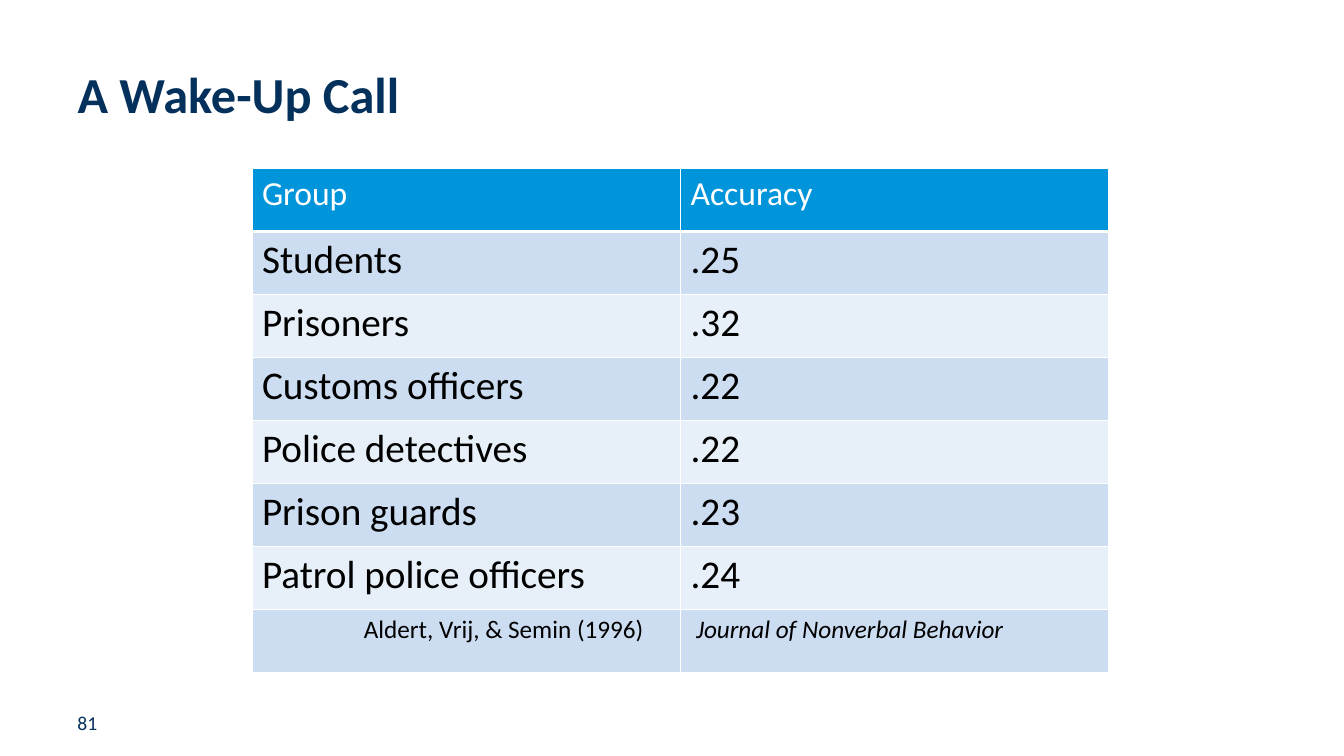
from lxml import etree
from pptx import Presentation
from pptx.dml.color import RGBColor
from pptx.enum.text import MSO_ANCHOR, PP_ALIGN
from pptx.oxml.ns import qn
from pptx.util import Cm, Pt

LEFT = PP_ALIGN.LEFT
TOP = MSO_ANCHOR.TOP
MIDDLE = MSO_ANCHOR.MIDDLE

NAVY = RGBColor(0x04, 0x30, 0x5C)
BLUE = RGBColor(0x00, 0x95, 0xDA)
DARK_BAND = RGBColor(0xCC, 0xDD, 0xF1)
LIGHT_BAND = RGBColor(0xE7, 0xEF, 0xF8)
WHITE = RGBColor(0xFF, 0xFF, 0xFF)
BLACK = RGBColor(0x00, 0x00, 0x00)

FONT = "Calibri"
TITLE_ONLY = 5
HEADER = ("Group", "Accuracy")
ACCURACIES = [
    ("Students", ".25"),
    ("Prisoners", ".32"),
    ("Customs officers", ".22"),
    ("Police detectives", ".22"),
    ("Prison guards", ".23"),
    ("Patrol police officers", ".24"),
]
CITATION = ("Aldert, Vrij, & Semin (1996)", "Journal of Nonverbal Behavior")
CITATION_MARGINS = (Cm(2.82), Cm(0.39))


def write_text(text_frame, text, size, color, bold=False, italic=False, anchor=TOP):
    """Write one left-aligned, formatted paragraph into a text frame."""
    text_frame.word_wrap = True
    text_frame.vertical_anchor = anchor
    paragraph = text_frame.paragraphs[0]
    paragraph.alignment = LEFT
    run = paragraph.add_run()
    run.text = text
    run.font.name = FONT
    run.font.size = Pt(size)
    run.font.bold = bold
    run.font.italic = italic
    run.font.color.rgb = color


def add_title(slide, text):
    """Place and fill the title placeholder."""
    title = slide.shapes.title
    title.left, title.top = Cm(1.7), Cm(0.76)
    title.width, title.height = Cm(30.48), Cm(3.18)
    write_text(title.text_frame, text, 36, NAVY, bold=True, anchor=MIDDLE)


def add_page_number(slide, number):
    """Add the page number at the bottom left."""
    box = slide.shapes.add_textbox(Cm(1.7), Cm(17.78), Cm(7.34), Cm(0.86))
    write_text(box.text_frame, number, 14, NAVY)


def set_borders(cell, top, bottom):
    """Give a cell white borders, with top and bottom widths in points."""
    properties = cell._tc.get_or_add_tcPr()
    for side, width in (("L", 1), ("R", 1), ("T", top), ("B", bottom)):
        line = etree.SubElement(properties, qn(f"a:ln{side}"), w=str(Pt(width)))
        fill = etree.SubElement(line, qn("a:solidFill"))
        etree.SubElement(fill, qn("a:srgbClr"), val=str(WHITE))


def fill_cell(cell, text, fill, size, color=BLACK, italic=False, top=1, bottom=1):
    """Write a table cell and set its borders and fill."""
    set_borders(cell, top, bottom)
    cell.fill.solid()
    cell.fill.fore_color.rgb = fill
    write_text(cell.text_frame, text, size, color, italic=italic)


def add_accuracy_table(slide):
    """Add the table of accuracy by group, with its citation row."""
    row_count = len(ACCURACIES) + 2
    frame = slide.shapes.add_table(
        row_count, 2, Cm(6.35), Cm(4.25), Cm(21.6), Cm(12.7))
    table = frame.table
    for column, text in enumerate(HEADER):
        fill_cell(table.cell(0, column), text, BLUE, 24, WHITE, bottom=3)
    for row, texts in enumerate(ACCURACIES, start=1):
        band = DARK_BAND if row % 2 else LIGHT_BAND
        for column, text in enumerate(texts):
            fill_cell(table.cell(row, column), text, band, 28,
                      top=3 if row == 1 else 1)
    for column, text in enumerate(CITATION):
        cell = table.cell(row_count - 1, column)
        fill_cell(cell, text, DARK_BAND, 18, italic=column == 1)
        cell.margin_left = CITATION_MARGINS[column]


def main():
    """Build the slide and save the presentation."""
    presentation = Presentation()
    presentation.slide_width, presentation.slide_height = Cm(33.87), Cm(19.05)
    slide = presentation.slides.add_slide(presentation.slide_layouts[TITLE_ONLY])
    add_page_number(slide, "81")
    add_title(slide, "A Wake-Up Call")
    add_accuracy_table(slide)
    presentation.save("out.pptx")


if __name__ == "__main__":
    main()
